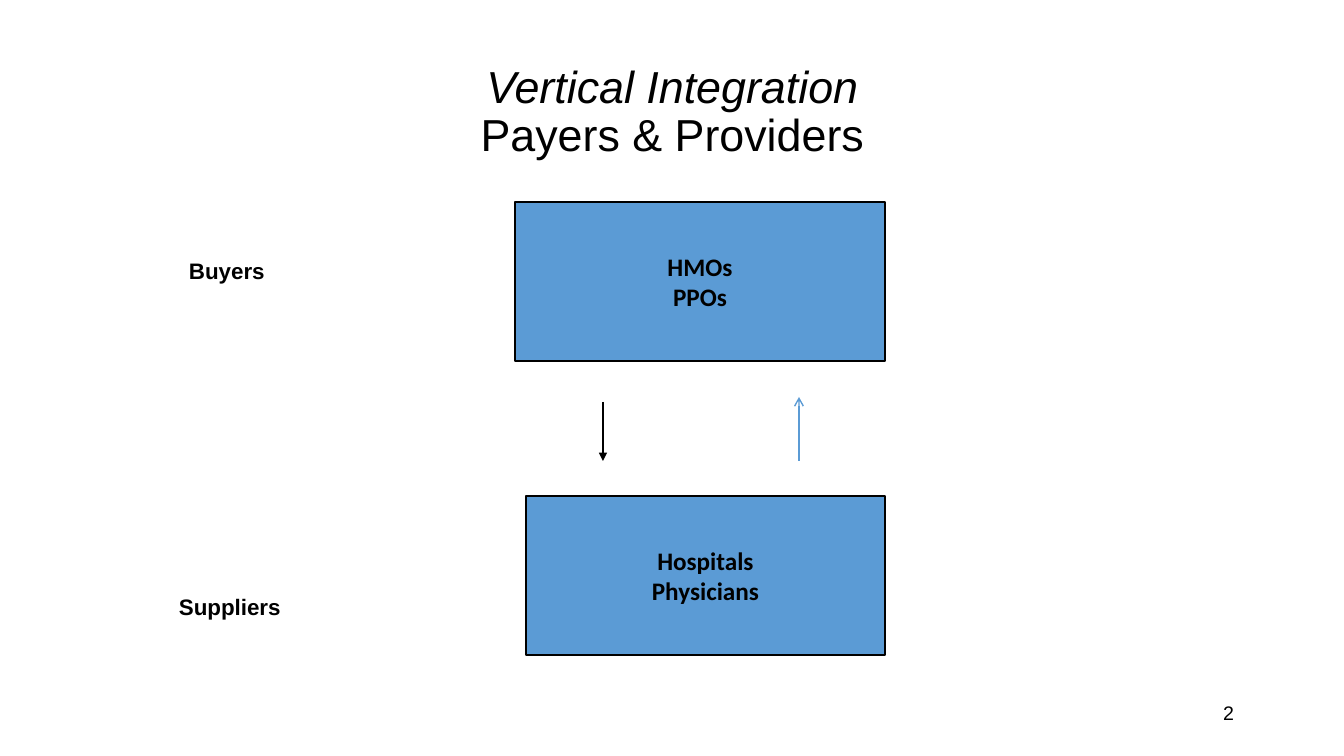
"""Build the slide on vertical integration of payers and providers."""
from lxml import etree
from pptx import Presentation
from pptx.dml.color import RGBColor
from pptx.enum.shapes import MSO_CONNECTOR, MSO_SHAPE
from pptx.enum.text import MSO_ANCHOR, PP_ALIGN
from pptx.oxml.ns import qn
from pptx.util import Emu, Pt

BLACK = RGBColor(0x00, 0x00, 0x00)
BLUE = RGBColor(0x5B, 0x9B, 0xD5)
LEFT, CENTER, RIGHT = PP_ALIGN.LEFT, PP_ALIGN.CENTER, PP_ALIGN.RIGHT
TOP, MIDDLE = MSO_ANCHOR.TOP, MSO_ANCHOR.MIDDLE
RECTANGLE = MSO_SHAPE.RECTANGLE
STRAIGHT = MSO_CONNECTOR.STRAIGHT


def px(*lengths):
    return [Emu(round(length * 914400 / 100.8)) for length in lengths]


def write(shape, text, size, font="Arial", bold=False, align=LEFT,
          anchor=TOP, spacing=1.0, italic_lines=0, wrap=True):
    frame = shape.text_frame
    frame.word_wrap = wrap
    frame.vertical_anchor = anchor
    frame.text = text
    for index, paragraph in enumerate(frame.paragraphs):
        paragraph.alignment = align
        paragraph.line_spacing = spacing
        style = paragraph.runs[0].font
        style.name = font
        style.size = Pt(size)
        style.bold = bold
        style.italic = index < italic_lines
        style.color.rgb = BLACK


deck = Presentation()
deck.slide_width, deck.slide_height = px(1344, 756)
slide = deck.slides.add_slide(deck.slide_layouts[6])
shapes = slide.shapes

title = shapes.add_textbox(*px(93, 40, 1159, 146))
write(title, "Vertical Integration\nPayers & Providers", size=32, align=CENTER,
      anchor=MIDDLE, spacing=0.9, italic_lines=1)

for role, left, top, width in (("Buyers", 179, 252, 213),
                               ("Suppliers", 169, 588, 234)):
    role_label = shapes.add_textbox(*px(left, top, width, 37))
    write(role_label, role, size=16, bold=True)

for members, left, top in (("HMOs\nPPOs", 515, 202),
                           ("Hospitals\nPhysicians", 526, 496)):
    group = shapes.add_shape(RECTANGLE, *px(left, top, 885 - left, 159))
    group.shadow.inherit = False
    group.fill.solid()
    group.fill.fore_color.rgb = BLUE
    group.line.color.rgb = BLACK
    group.line.width = Pt(1)
    write(group, members, size=18, font="Calibri", bold=True, align=CENTER,
          anchor=MIDDLE, wrap=False)

for x, start, end, color, head in ((603, 402, 461, BLACK, "triangle"),
                                   (799, 461, 397, BLUE, "arrow")):
    flow = shapes.add_connector(STRAIGHT, *px(x, start, x, end))
    flow.line.color.rgb = color
    flow.line.width = Pt(1)
    etree.SubElement(flow.line._get_or_add_ln(), qn("a:tailEnd"), type=head)
    etree.SubElement(flow._element.spPr, qn("a:effectLst"))

page_number = shapes.add_textbox(*px(964, 688, 280, 50))
write(page_number, "2", size=14, align=RIGHT, anchor=MIDDLE)

deck.save("out.pptx")
